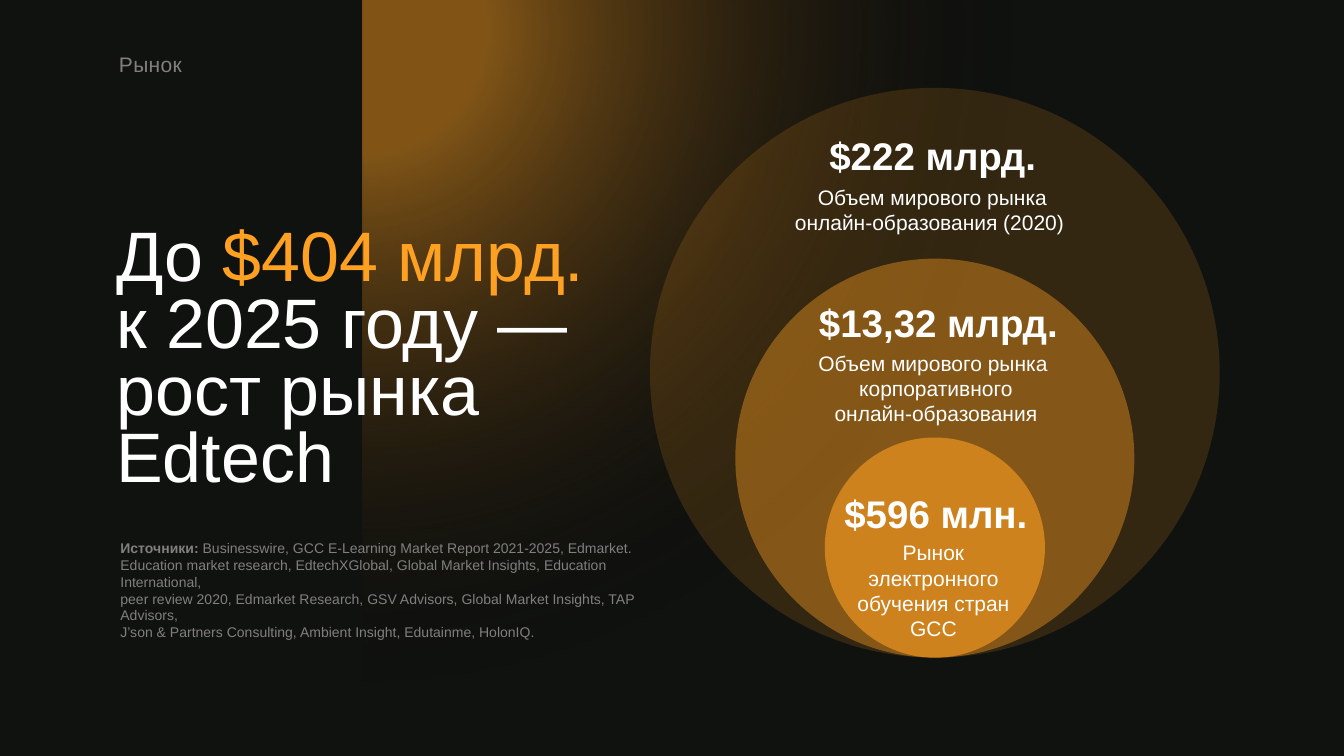
from lxml import etree
from pptx import Presentation
from pptx.dml.color import RGBColor
from pptx.enum.shapes import MSO_SHAPE
from pptx.enum.text import MSO_ANCHOR, MSO_AUTO_SIZE, PP_ALIGN
from pptx.oxml import parse_xml
from pptx.oxml.ns import nsdecls, qn
from pptx.util import Pt

BACKGROUND, ORANGE, WHITE, GRAY = "101210", "FEA022", "FFFFFF", "80807F"
CIRCLES_CENTER, CIRCLES_BOTTOM = 1335.5, 939.5

# diameter, amount and its box, caption and its box
MARKETS = [
    (814, "$222 млрд.", (955.5, 181.5, 754, 92),
     "Объем мирового рынка\vонлайн-образования (2020) ", (961, 249, 742, 101.5)),
    (570, "$13,32 млрд.", (953, 421, 775, 92),
     "Объем мирового рынка \nкорпоративного\vонлайн-образования", (960, 481, 754, 146)),
    (314.5, "$596 млн.", (949.5, 692.5, 775, 92),
     "Рынок электронного обучения стран GCC", (1199, 747.5, 269, 191.5)),
]

SOURCES = [
    "Businesswire, GCC E-Learning Market Report 2021-2025, Edmarket. ",
    "Education market research, EdtechXGlobal, Global Market Insights, Education International, ",
    "peer review 2020, Edmarket Research, GSV Advisors, Global Market Insights, TAP Advisors, ",
    "J’son & Partners Consulting, Ambient Insight, Edutainme, HolonIQ.",
]


def rgb(color):
    return RGBColor.from_string(color)


def points(box):
    return [Pt(length) for length in box]


def prepare_frame(frame, inset):
    frame.word_wrap = True
    frame.auto_size = MSO_AUTO_SIZE.SHAPE_TO_FIT_TEXT
    frame.vertical_anchor = MSO_ANCHOR.MIDDLE
    frame.margin_left = frame.margin_right = Pt(inset)
    frame.margin_top = frame.margin_bottom = Pt(inset)


def format_text(frame, size, color, bold=False, align=PP_ALIGN.LEFT, line_spacing=1.0):
    for paragraph in frame.paragraphs:
        paragraph.alignment = align
        paragraph.line_spacing = line_spacing
        for run in paragraph.runs:
            run.font.name = "Arial"
            run.font.size = Pt(size)
            run.font.bold = bold
            run.font.color.rgb = rgb(color)


def add_text(slide, box, text, size, color, inset=6, **style):
    frame = slide.shapes.add_textbox(*points(box)).text_frame
    prepare_frame(frame, inset)
    frame.text = text
    format_text(frame, size, color, **style)
    return frame


def add_plain_shape(slide, kind, box):
    shape = slide.shapes.add_shape(kind, *points(box))
    shape.shadow.inherit = False
    shape.line.fill.background()
    return shape


def add_glow(slide):
    """Radial gradient that fades from orange to transparent."""
    glow = add_plain_shape(slide, MSO_SHAPE.RECTANGLE, (518, -126, 1676, 1886))
    gradient = parse_xml(
        f'<a:gradFill {nsdecls("a")} rotWithShape="1"><a:gsLst>'
        '<a:gs pos="14000"><a:srgbClr val="D8881D"><a:alpha val="56000"/></a:srgbClr></a:gs>'
        '<a:gs pos="74000"><a:srgbClr val="000000"><a:alpha val="0"/></a:srgbClr></a:gs>'
        '</a:gsLst><a:path path="circle">'
        '<a:fillToRect l="-8000" t="9000" r="108000" b="91000"/></a:path></a:gradFill>')
    glow._element.spPr.find(qn("a:prstGeom")).addnext(gradient)


def add_circle(slide, diameter, opacity):
    box = (CIRCLES_CENTER - diameter / 2, CIRCLES_BOTTOM - diameter, diameter, diameter)
    circle = add_plain_shape(slide, MSO_SHAPE.OVAL, box)
    circle.fill.solid()
    circle.fill.fore_color.rgb = rgb(ORANGE)
    color = circle._element.spPr.find(qn("a:solidFill")).find(qn("a:srgbClr"))
    etree.SubElement(color, qn("a:alpha")).set("val", str(opacity * 1000))


def place_title(slide):
    title = slide.shapes.title
    title.left, title.top, title.width, title.height = points((160, 261.5, 742, 511))
    frame = title.text_frame
    prepare_frame(frame, 6)
    paragraph = frame.paragraphs[0]
    for part in ("До ", "$404 млрд. ", "к 2025 году — рост рынка Edtech"):
        paragraph.add_run().text = part
    format_text(frame, 100, WHITE, line_spacing=0.8)
    paragraph.space_before = Pt(0)
    paragraph.runs[1].font.color.rgb = rgb(ORANGE)
    # The placeholder comes first in the tree; bring it in front of the glow
    slide.shapes._spTree.append(title._element)


def add_sources(slide):
    frame = add_text(slide, (172, 785, 800, 116), "Источники: ", 20, GRAY, inset=0)
    paragraph = frame.paragraphs[0]
    for number, line in enumerate(SOURCES):
        if number:
            paragraph.add_line_break()
        paragraph.add_run().text = line
    format_text(frame, 20, GRAY)
    paragraph.runs[0].font.bold = True


def add_section_label(slide):
    frame = add_text(slide, (170, 65.5, 603, 45), "Рынок", 30, GRAY, inset=0, line_spacing=1.2)
    frame.paragraphs[0].runs[0].font._element.set("spc", "50")


def main():
    presentation = Presentation()
    presentation.slide_width, presentation.slide_height = Pt(1920), Pt(1080)
    slide = presentation.slides.add_slide(presentation.slide_layouts[5])
    slide.background.fill.solid()
    slide.background.fill.fore_color.rgb = rgb(BACKGROUND)

    add_glow(slide)
    add_sources(slide)
    add_section_label(slide)
    place_title(slide)
    for market, opacity in zip(MARKETS, (15, 40, 60)):
        add_circle(slide, market[0], opacity)
    for _, amount, amount_box, caption, caption_box in MARKETS:
        add_text(slide, amount_box, amount, 55, WHITE, bold=True,
                 align=PP_ALIGN.CENTER, line_spacing=0.8)
        add_text(slide, caption_box, caption, 30, WHITE, align=PP_ALIGN.CENTER)

    presentation.save("out.pptx")


if __name__ == "__main__":
    main()
